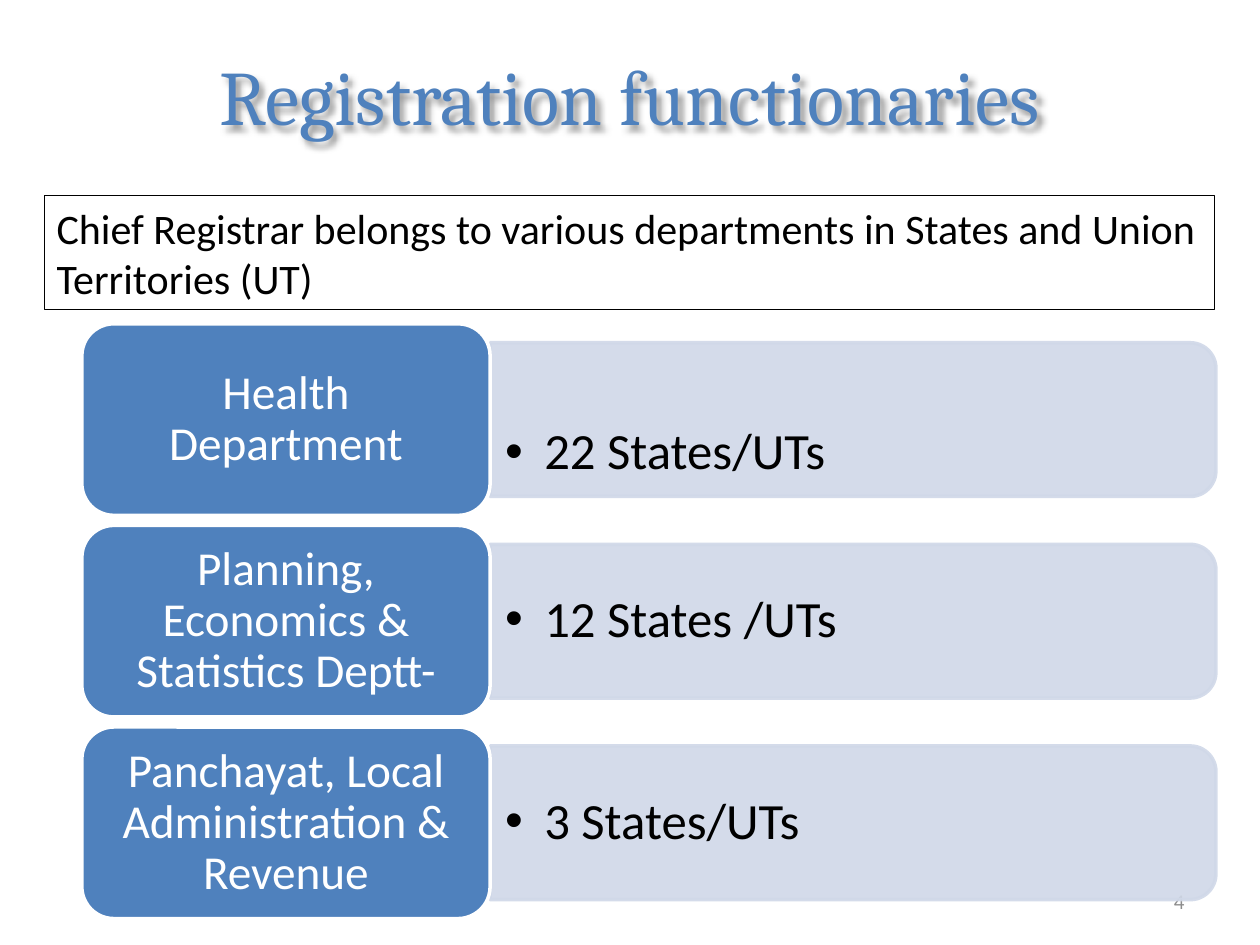
"""Build the slide on registration functionaries."""
import pptx
import pptx.util
import pptx.dml.color
import pptx.enum.shapes
import pptx.enum.text
import pptx.oxml
import pptx.oxml.ns

TITLE = "Registration functionaries"
LEAD = "Chief Registrar belongs to various departments in States and Union Territories (UT)"
PAGE = "4"
ROWS = [
    ("Health Department", "22 States/UTs", 6),
    ("Planning, Economics & Statistics Deptt-", "12 States /UTs", 0.6),
    ("Panchayat, Local Administration & Revenue", "3 States/UTs", 0.6),
]
BLUE, PALE, WHITE, BLACK, GREY = "4F81BD", "D0D8E8", "FFFFFF", "000000", "8C8C8C"

COLS, LINES = 100, 75
TOP, PITCH = 25.7, 16
TILE = {"left": 6.5, "wide": 32.4, "high": 15.2}
BAND = {"left": 38.9, "wide": 57.6, "high": 12.2}
NOTE = {"wide": 57, "high": 11}

KIND = pptx.enum.shapes.MSO_SHAPE
ALIGN = pptx.enum.text.PP_ALIGN
MID = pptx.enum.text.MSO_ANCHOR.MIDDLE
HEAD = {"size": 44, "name": "Cambria", "color": BLUE}
BODY = {"size": 24, "name": "Calibri", "color": BLACK}
LABEL = BODY | {"size": 27, "color": WHITE}
COUNT = BODY | {"size": 29}
FOOT = BODY | {"size": 12, "color": GREY}
SHADE = (
    '<a:effectLst %s><a:outerShdw blurRad="50800" dist="38100" dir="2700000" algn="tl">'
    '<a:srgbClr val="000000"><a:alpha val="40000"/></a:srgbClr></a:outerShdw></a:effectLst>'
)
BULLETS = ('<a:buFont %s typeface="Arial"/>', '<a:buChar %s char="•"/>')
ALPHA = '<a:alpha %s val="90000"/>'

deck = pptx.Presentation()
deck.slide_width = pptx.util.Inches(10)
deck.slide_height = pptx.util.Inches(7.5)
slide = deck.slides.add_slide(deck.slide_layouts[6])


def rgb(code):
    """Turn a hex string into a colour."""
    return pptx.dml.color.RGBColor.from_string(code)


def node(text):
    """Make a drawing element from a template."""
    return pptx.oxml.parse_xml(text % pptx.oxml.ns.nsdecls("a"))


def place(*spot):
    """Turn grid columns and rows into slide lengths."""
    sides = (deck.slide_width / COLS, deck.slide_height / LINES) * 2
    return [round(part * side) for part, side in zip(spot, sides)]


def write(shape, text, font, align=ALIGN.LEFT, pads=(1, 0.5, 1, 0.5), **look):
    """Put one styled paragraph into a shape."""
    frame = shape.text_frame
    form = {"word_wrap": True, "vertical_anchor": MID}
    names = ("margin_left", "margin_top", "margin_right", "margin_bottom")
    form |= dict(zip(names, place(*pads)))
    for key, val in form.items():
        setattr(frame, key, val)
    para = frame.paragraphs[0]
    for key, val in ({"alignment": align} | look).items():
        setattr(para, key, val)
    run = para.add_run()
    run.text = text
    run.font.size = pptx.util.Pt(font["size"])
    run.font.name = font["name"]
    run.font.color.rgb = rgb(font["color"])
    return para


def box(spot, *args, **look):
    """Add a text box and write in it."""
    shape = slide.shapes.add_textbox(*place(*spot))
    return shape, write(shape, *args, **look)


def draw(kind, spot, fill, line, width):
    """Add a flat preset shape."""
    shape = slide.shapes.add_shape(kind, *place(*spot))
    shape.shadow.inherit = False
    if fill:
        shape.fill.solid()
        shape.fill.fore_color.rgb = rgb(fill)
    else:
        shape.fill.background()
    shape.line.color.rgb = rgb(line)
    shape.line.width = pptx.util.Pt(width)
    return shape


def band(mid, text, drop):
    """Draw the pale band and its bulleted count."""
    across = BAND["left"] + BAND["wide"] / 2
    spot = (across - BAND["high"] / 2, mid - BAND["wide"] / 2, BAND["high"], BAND["wide"])
    shape = draw(KIND.ROUND_2_SAME_RECTANGLE, spot, PALE, PALE, 2)
    shape.rotation = 90
    for tint in shape._element.spPr.iter(pptx.oxml.ns.qn("a:srgbClr")):
        tint.append(node(ALPHA))
    spot = (BAND["left"], mid - NOTE["high"] / 2, NOTE["wide"], NOTE["high"])
    para = box(spot, text, COUNT, pads=(1.2, drop, 1.2, 0.6), level=1, line_spacing=0.9)[1]
    props = para._p.get_or_add_pPr()
    dent = place(3.1)[0]
    props.set("marL", str(dent))
    props.set("indent", str(-dent))
    for text in BULLETS:
        props.append(node(text))


def tile(top, text):
    """Draw the blue tile that names a department."""
    spot = (TILE["left"], top, TILE["wide"], TILE["high"])
    shape = draw(KIND.ROUNDED_RECTANGLE, spot, BLUE, WHITE, 2)
    write(shape, text, LABEL, ALIGN.CENTER, (1.8, 1.3, 1.8, 1.3), line_spacing=0.9)


box((71.7, 69.5, 23.3, 4), PAGE, FOOT, ALIGN.RIGHT)
for row, (name, count, drop) in enumerate(ROWS):
    top = TOP + row * PITCH
    band(top + TILE["high"] / 2, count, drop)
    tile(top, name)
title = box((5, 1.3, 90, 12.5), TITLE, HEAD, ALIGN.CENTER)[0]
title._element.spPr.append(node(SHADE))
lead = draw(KIND.RECTANGLE, (3.5, 15.5, 92.9, 9.1), None, BLACK, 0.5)
write(lead, LEAD, BODY)

deck.save("out.pptx")
